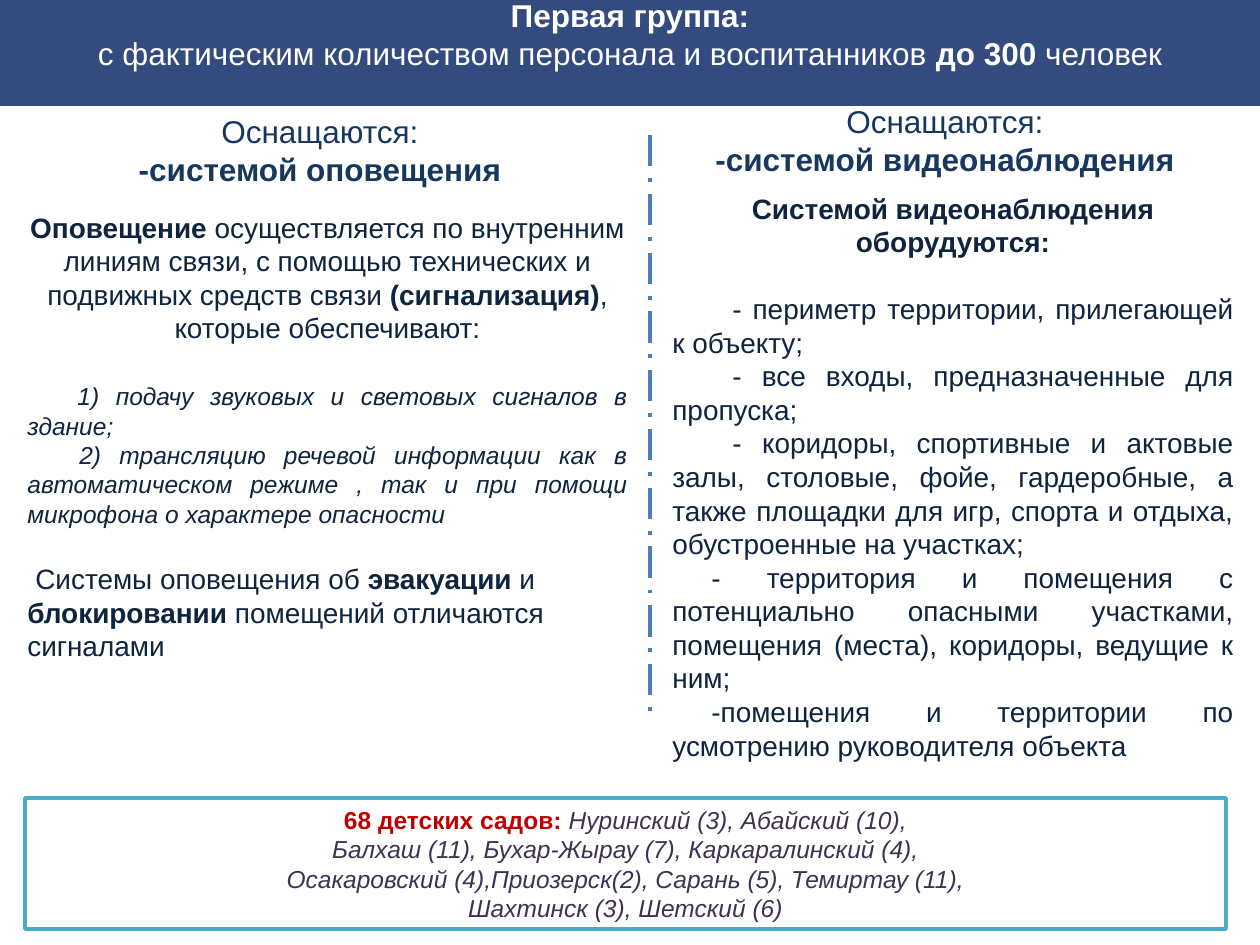
from lxml.etree import SubElement
from pptx import Presentation
from pptx.dml.color import RGBColor
from pptx.enum.dml import MSO_LINE
from pptx.enum.shapes import MSO_CONNECTOR, MSO_SHAPE
from pptx.enum.text import MSO_ANCHOR, PP_ALIGN
from pptx.oxml.ns import qn
from pptx.util import Pt

SCALE = 914400 / 126
WIDTH, HEIGHT = 1260, 945
NAVY, INK, HEAD, PLUM, RED = "001F5F", "0F243E", "17375E", "403152", "C00000"
MID, FULL, LEFT = PP_ALIGN.CENTER, PP_ALIGN.JUSTIFY, PP_ALIGN.LEFT

# A paragraph: text (*bold*), size, align, then optional settings
TITLE = [
    ("*Первая группа:*", 18, MID, {}),
    ("с фактическим количеством персонала и воспитанников *до 300 *человек", 18, MID, {}),
]
ALARM = [
    ("*Оповещение *осуществляется по внутренним линиям связи, с помощью технических "
     "и подвижных средств связи *(сигнализация)*, которые обеспечивают:", 16, MID, {}),
    ("1) подачу звуковых и световых сигналов в здание;", 14, FULL,
     {"gap": 21, "indent": 50, "italic": True}),
    ("2) трансляцию речевой информации как в автоматическом режиме , так и при помощи "
     "микрофона о характере опасности", 14, FULL, {"indent": 52, "italic": True}),
    ("Системы оповещения об *эвакуации* и *блокировании *помещений отличаются сигналами",
     16, LEFT, {"gap": 19, "indent": 8}),
]
VIDEO = [
    ("*Системой видеонаблюдения оборудуются:*", 16, MID, {}),
    ("- периметр территории, прилегающей к объекту;", 16, FULL, {"gap": 19, "indent": 60}),
    ("- все входы, предназначенные для пропуска;", 16, FULL, {"indent": 60}),
    ("- коридоры, спортивные и актовые залы, столовые, фойе, гардеробные, а также "
     "площадки для игр, спорта и отдыха, обустроенные на участках;", 16, FULL, {"indent": 60}),
    ("- территория и помещения с потенциально опасными участками, помещения (места), "
     "коридоры, ведущие к ним;", 16, FULL, {"indent": 39}),
    ("-помещения и территории по усмотрению руководителя объекта", 16, FULL, {"indent": 39}),
]
TOWNS = [
    ("*68 детских садов: *Нуринский (3), Абайский (10),", 14, MID, {}),
    ("Балхаш (11), Бухар-Жырау (7), Каркаралинский (4),", 14, MID, {}),
    ("Осакаровский (4),Приозерск(2), Сарань (5), Темиртау (11),", 14, MID, {}),
    ("Шахтинск (3), Шетский (6)", 14, MID, {}),
]
# Column: heading place, heading, body place, body
COLUMNS = [
    ((0, 106, 640, 89), "системой оповещения", (15, 204, 625, 505), ALARM),
    ((630, 96, 630, 89), "системой видеонаблюдения", (660, 185, 586, 590), VIDEO),
]


def px(*sizes):
    return [round(size * SCALE) for size in sizes]


def tint(hue):
    return RGBColor.from_string(hue)


def paint(shape, hue):
    shape.fill.solid()
    shape.fill.fore_color.rgb = tint(hue)


def write(frame, paras, hue):
    frame.word_wrap = True
    for i, (text, size, align, more) in enumerate(paras):
        para = frame.add_paragraph() if i else frame.paragraphs[0]
        para.alignment = align
        para.space_before = Pt(more.get("gap", 0))
        font = para.font
        font.name, font.size = "Arial", Pt(size)
        font.italic = more.get("italic", False)
        font.color.rgb = tint(hue)
        if "indent" in more:
            para._p.get_or_add_pPr().set("indent", str(px(more["indent"])[0]))
        for j, part in enumerate(text.split("*")):
            if part:
                run = para.add_run()
                run.text, run.font.bold = part, j % 2 == 1


def add_text(slide, place, paras, hue):
    write(slide.shapes.add_textbox(*px(*place)).text_frame, paras, hue)


def add_title(slide):
    band = slide.shapes.title
    band.left, band.top, band.width, band.height = px(0, -4, WIDTH, 110)
    paint(band, NAVY)
    color = band.fill._xPr.find(".//" + qn("a:srgbClr"))
    SubElement(color, qn("a:alpha")).set("val", "80000")
    frame = band.text_frame
    frame.margin_left = frame.margin_right = frame.margin_top = frame.margin_bottom = 0
    frame.vertical_anchor = MSO_ANCHOR.TOP
    write(frame, TITLE, "FFFFFF")


def add_divider(slide):
    line = slide.shapes.add_connector(MSO_CONNECTOR.STRAIGHT, *px(650, 135, 650, 711))
    line.line.color.rgb = tint("4B7EBC")
    line.line.width = Pt(2.25)
    line.line.dash_style = MSO_LINE.LONG_DASH_DOT
    SubElement(line._element.spPr, qn("a:effectLst"))


def add_towns(slide):
    box = slide.shapes.add_shape(MSO_SHAPE.RECTANGLE, *px(25, 798, 1201, 131))
    box.shadow.inherit = False
    paint(box, "FFFFFF")
    box.line.color.rgb = tint("4BACC6")
    box.line.width = Pt(2)
    write(box.text_frame, TOWNS, PLUM)
    for para in box.text_frame.paragraphs:
        for run in para.runs:
            run.font.italic = not run.font.bold
            if run.font.bold:
                run.font.color.rgb = tint(RED)


def main():
    deck = Presentation()
    deck.slide_width, deck.slide_height = px(WIDTH, HEIGHT)
    slide = deck.slides.add_slide(deck.slide_layouts[5])
    add_title(slide)
    add_divider(slide)
    for top, name, place, body in COLUMNS:
        head = [("Оснащаются:", 18, MID, {}), (f"*-{name}*", 18, MID, {})]
        add_text(slide, top, head, HEAD)
        add_text(slide, place, body, INK)
    add_towns(slide)
    deck.save("out.pptx")


if __name__ == "__main__":
    main()
